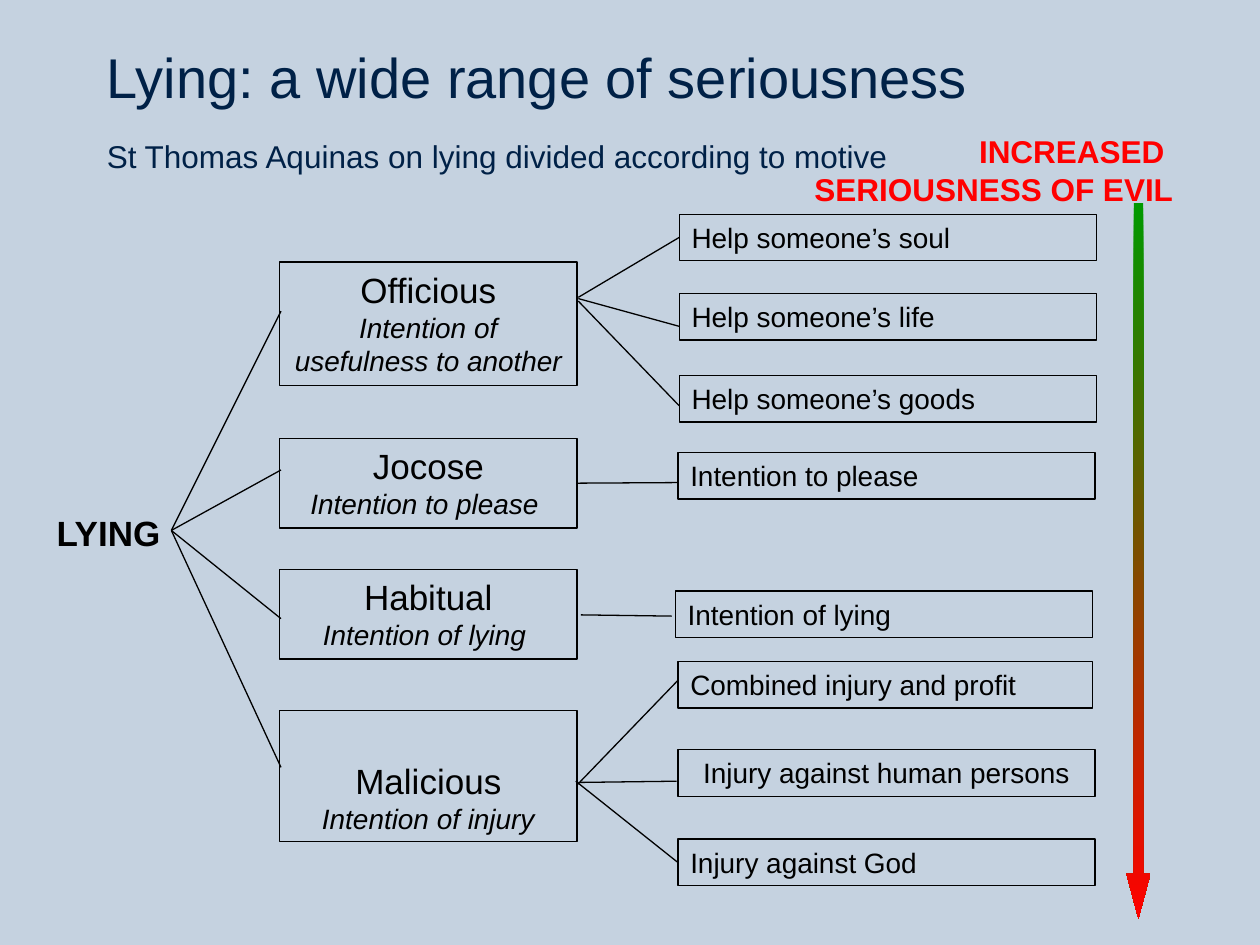
from lxml import etree
from pptx import Presentation
from pptx.dml.color import RGBColor
from pptx.enum import shapes, text
from pptx.oxml.ns import qn
from pptx.util import Inches, Pt

COLORS = {
    "background": "C5D2E0",
    "title": "002147",
    "ink": "000000",
    "evil": "FF0000",
    "mild": "009900",
}
LEFT, CENTER, RIGHT = text.PP_ALIGN.LEFT, text.PP_ALIGN.CENTER, text.PP_ALIGN.RIGHT


def write(shape, lines, align=LEFT, color="ink", bold=False, anchor=text.MSO_ANCHOR.TOP):
    frame = shape.text_frame
    frame.word_wrap = True
    frame.vertical_anchor = anchor
    paragraph = frame.paragraphs[0]
    paragraph.alignment = align
    for index, (words, size, italic) in enumerate(lines):
        if index:
            paragraph.add_line_break()
        run = paragraph.add_run()
        run.text = words
        run.font.name = "Arial"
        run.font.size = Pt(size)
        run.font.bold = bold
        run.font.italic = italic
        run.font.color.rgb = RGBColor.from_string(COLORS[color])
    return paragraph


def add_line(x1, y1, x2, y2):
    line = slide.shapes.add_connector(
        shapes.MSO_CONNECTOR.STRAIGHT, Inches(x1), Inches(y1), Inches(x2), Inches(y2))
    line.line.color.rgb = RGBColor.from_string(COLORS["ink"])
    line.line.width = Pt(0.75)
    etree.SubElement(line._element.spPr, qn("a:effectLst"))
    return line


presentation = Presentation()
presentation.slide_width = Inches(10)
presentation.slide_height = Inches(7.5)
slide = presentation.slides.add_slide(presentation.slide_layouts[6])
slide.background.fill.solid()
slide.background.fill.fore_color.rgb = RGBColor.from_string(COLORS["background"])

title = slide.shapes.add_textbox(Inches(0.75), Inches(0.31), Inches(8.5), Inches(1.02))
title_paragraph = write(title, [
    ("Lying: a wide range of seriousness", 32, False),
    ("St Thomas Aquinas on lying divided according to motive", 18, False),
], color="title")
title_paragraph.line_spacing = Pt(37)

root = slide.shapes.add_textbox(Inches(0.35), Inches(4.01), Inches(1.42), Inches(0.44))
write(root, [("LYING", 20, False)], bold=True)

scale_label = slide.shapes.add_textbox(Inches(6.34), Inches(1), Inches(3.07), Inches(0.71))
write(scale_label, [("INCREASED ", 18, False), ("SERIOUSNESS OF EVIL", 18, False)],
      RIGHT, "evil", True)

kinds = [
    ("Officious", "Intention of usefulness to another ", 2.08, 0.98, 2.47),
    ("Jocose", "Intention to please ", 3.48, 0.71, 3.73),
    ("Habitual", "Intention of lying ", 4.52, 0.71, 4.91),
    ("Malicious", "Intention of injury", 5.64, 1.04, 6.09),
]
motives = [
    ("Help someone’s soul", 5.39, 1.7, 3.31, LEFT),
    ("Help someone’s life", 5.39, 2.33, 3.31, LEFT),
    ("Help someone’s goods", 5.39, 2.98, 3.31, LEFT),
    ("Intention to please", 5.38, 3.59, 3.31, LEFT),
    ("Intention of lying", 5.36, 4.69, 3.31, LEFT),
    ("Combined injury and profit", 5.38, 5.25, 3.29, LEFT),
    ("Injury against human persons", 5.38, 5.95, 3.31, CENTER),
    ("Injury against God", 5.38, 6.66, 3.31, LEFT),
]

boxes = {}
for name, intention, top, height, line_end in kinds:
    boxes[name] = (2.22, top, 2.36, height, [(name, 20, False), (intention, 16, True)], CENTER)
    add_line(1.36, 4.21, 2.23, line_end)
for name, left, top, width, align in motives:
    boxes[name] = (left, top, width, 0.37, [(name, 16, False)], align)

rectangles = {}
for name, (left, top, width, height, lines, align) in boxes.items():
    rectangle = slide.shapes.add_shape(
        shapes.MSO_SHAPE.RECTANGLE, Inches(left), Inches(top), Inches(width), Inches(height))
    rectangle.shadow.inherit = False
    rectangle.fill.background()
    rectangle.line.color.rgb = RGBColor.from_string(COLORS["ink"])
    rectangle.line.width = Pt(0.75)
    anchor = text.MSO_ANCHOR.BOTTOM if name == "Malicious" else text.MSO_ANCHOR.TOP
    write(rectangle, lines, align, anchor=anchor)
    rectangles[name] = rectangle

branches = [
    (4.59, 2.36, 5.39, 1.88, None, "Help someone’s soul"),
    (4.59, 2.37, 5.39, 2.59, None, None),
    (4.59, 2.39, 5.39, 3.22, None, None),
    (4.59, 3.83, 5.38, 3.83, "Jocose", None),
    (4.61, 4.88, 5.33, 4.89, None, None),
    (4.58, 6.23, 5.38, 5.4, None, None),
    (4.59, 6.21, 5.37, 6.2, None, None),
    (4.57, 6.2, 5.38, 6.82, None, "Injury against God"),
]
for x1, y1, x2, y2, kind, motive in branches:
    branch = add_line(x1, y1, x2, y2)
    if kind:
        branch.begin_connect(rectangles[kind], 3)
    if motive:
        branch.end_connect(rectangles[motive], 1)

arrow = slide.shapes.add_shape(
    shapes.MSO_SHAPE.DOWN_ARROW, Inches(8.94), Inches(1.61), Inches(0.19), Inches(5.68))
arrow.shadow.inherit = False
arrow.adjustments[0] = 0.39
arrow.adjustments[1] = 1.86
arrow.line.fill.background()
arrow.fill.gradient()
arrow.fill.gradient_angle = 270
for stop, color, position in zip(arrow.fill.gradient_stops, ("mild", "evil"), (0, 1)):
    stop.color.rgb = RGBColor.from_string(COLORS[color])
    stop.position = position

presentation.save("out.pptx")
